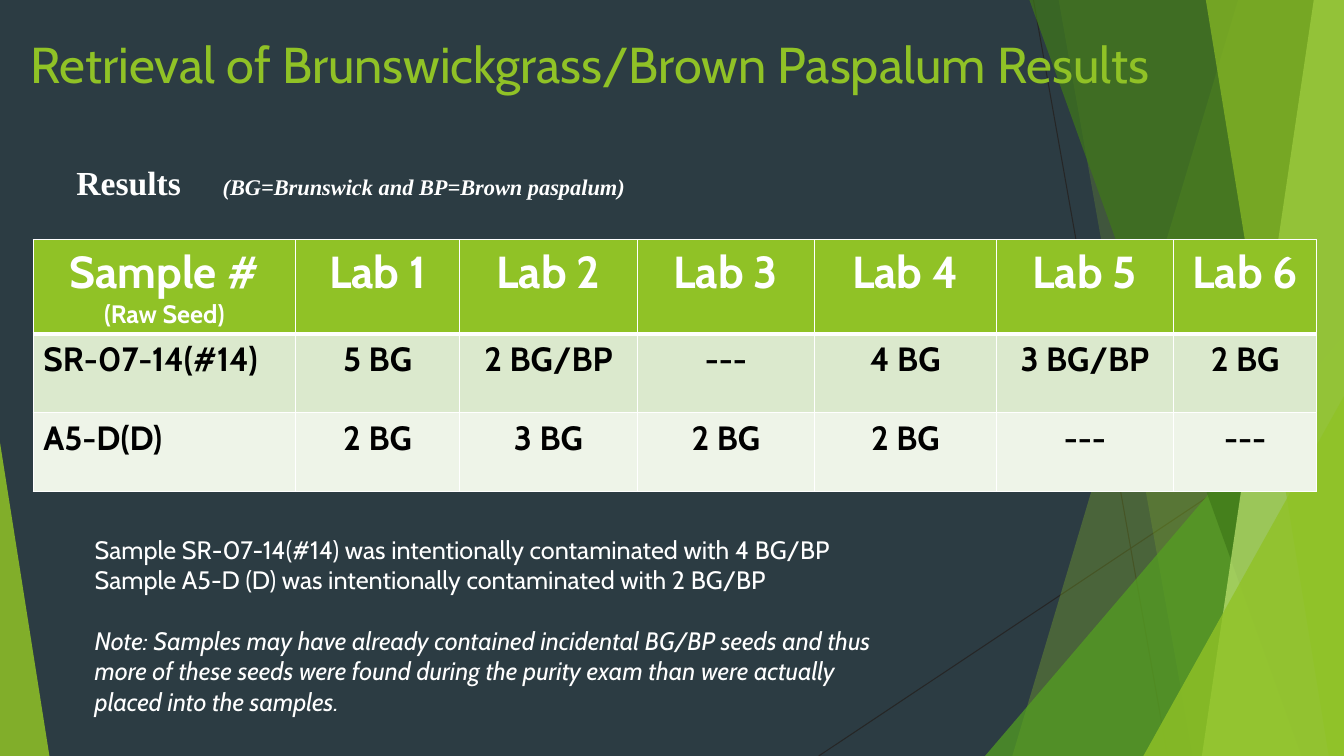
from lxml import etree
from pptx import Presentation
from pptx.dml.color import RGBColor
from pptx.enum.shapes import MSO_CONNECTOR, MSO_SHAPE
from pptx.enum.text import MSO_ANCHOR, PP_ALIGN
from pptx.oxml.ns import qn
from pptx.util import Inches, Pt

STRAIGHT = MSO_CONNECTOR.STRAIGHT
TRIANGLE = MSO_SHAPE.ISOSCELES_TRIANGLE
TOP, MIDDLE = MSO_ANCHOR.TOP, MSO_ANCHOR.MIDDLE
LEFT, CENTER = PP_ALIGN.LEFT, PP_ALIGN.CENTER

SLATE = RGBColor(0x2C, 0x3C, 0x43)
CHARCOAL = RGBColor(0x26, 0x26, 0x26)
LIME = RGBColor(0x90, 0xC2, 0x26)
GREEN = RGBColor(0x54, 0xA0, 0x21)
FOREST = RGBColor(0x3F, 0x78, 0x19)
PALE_LIME = RGBColor(0xC0, 0xE4, 0x74)
BAND_DARK = RGBColor(0xDB, 0xE9, 0xCD)
BAND_LIGHT = RGBColor(0xEE, 0xF4, 0xE8)
WHITE = RGBColor(0xFF, 0xFF, 0xFF)
BLACK = RGBColor(0, 0, 0)

WIDTH, HEIGHT = 13.33, 7.5
SANS, SERIF = "Cabin", "Times New Roman"

RAYS = [((10.25, 0), (11.58, HEIGHT)), ((WIDTH, 4.03), (8.12, HEIGHT))]
SHARDS = [
    ("band", 12.28, 10.04, LIME, 30),
    ("band", 10.5, 11.83, LIME, 20),
    ("triangle", (9.77, 3.33, 3.56, 4.17), 1, GREEN, 72),
    ("band", 10.21, 12.91, FOREST, 70),
    ("band", 13.03, 11.92, PALE_LIME, 70),
    ("band", 11.96, 13.18, LIME, 65),
    ("triangle", (11.34, 3.93, 1.99, 3.57), 1, LIME, 80),
    ("triangle", (0, 4.39, 0.49, 3.11), 0, LIME, 85),
]
COLUMNS = [2.6, 1.63, 1.76, 1.76, 1.8, 1.76, 1.42]
ROW_HEIGHT = 0.78
RESULTS = [
    ["Sample #"] + [f"Lab {n}" for n in range(1, 7)],
    ["SR-07-14(#14)", "5 BG", "2 BG/BP", "---", "4 BG", "3 BG/BP", "2 BG"],
    ["A5-D(D)", "2 BG", "3 BG", "2 BG", "2 BG", "---", "---"],
]
ROW_STYLES = [(LIME, WHITE, 32), (BAND_DARK, BLACK, 24), (BAND_LIGHT, BLACK, 24)]
NOTES = [
    ("Sample SR-07-14(#14) was intentionally contaminated with 4 BG/BP", False, 0),
    ("Sample A5-D (D) was intentionally contaminated with 2 BG/BP", False, 0),
    ("Note: Samples may have already contained incidental BG/BP seeds and thus more of "
     "these seeds were found during the purity exam than were actually placed into the "
     "samples.", True, 22),
]


def add_run(p, text, size=18, color=WHITE, font=SANS, bold=False, italic=False):
    """Append a formatted run to a paragraph."""
    r = p.add_run()
    r.text = text
    f = r.font
    f.size, f.name, f.bold, f.italic = Pt(size), font, bold, italic
    f.color.rgb = color


def add_box(s, box, anchor=TOP):
    """Add a wrapping text box and return its text frame."""
    tf = s.shapes.add_textbox(*map(Inches, box)).text_frame
    tf.word_wrap = True
    tf.vertical_anchor = anchor
    return tf


def paint(sp, color, opacity):
    """Give a shape a translucent fill without outline or shadow."""
    sp.shadow.inherit = False
    sp.line.fill.background()
    sp.fill.solid()
    sp.fill.fore_color.rgb = color
    clr = sp.fill._xPr.find(".//" + qn("a:srgbClr"))
    etree.SubElement(clr, qn("a:alpha")).set("val", str(opacity * 1000))


def add_ray(s, start, end):
    """Add a thin decorative line."""
    line = s.shapes.add_connector(STRAIGHT, *map(Inches, start + end))
    line.line.color.rgb = CHARCOAL
    line.line.width = Pt(0.75)
    etree.SubElement(line._element.spPr, qn("a:effectLst"))


def add_band(s, top_x, bottom_x):
    """Add a full-height band from a slanted left edge to the slide's right edge."""
    right, bottom = Inches(WIDTH), Inches(HEIGHT)
    builder = s.shapes.build_freeform(Inches(top_x), 0)
    builder.add_line_segments([(right, 0), (right, bottom), (Inches(bottom_x), bottom)])
    return builder.convert_to_shape()


def add_triangle(s, box, apex):
    """Add a triangle whose apex sits at a fraction of its width."""
    sp = s.shapes.add_shape(TRIANGLE, *map(Inches, box))
    sp.adjustments[0] = apex
    return sp


def add_backdrop(s):
    """Draw the dark background with its rays and green shards."""
    s.background.fill.solid()
    s.background.fill.fore_color.rgb = SLATE
    for start, end in RAYS:
        add_ray(s, start, end)
    makers = {"band": add_band, "triangle": add_triangle}
    for kind, first, second, color, opacity in SHARDS:
        paint(makers[kind](s, first, second), color, opacity)


def add_title(s, box):
    """Place the slide title."""
    p = add_box(s, box).paragraphs[0]
    add_run(p, "Retrieval of Brunswickgrass/Brown Paspalum Results", size=36, color=LIME)


def add_legend(s, box):
    """Place the results heading with its abbreviations at a tab stop."""
    p = add_box(s, box, anchor=MIDDLE).paragraphs[0]
    tabs = etree.SubElement(p._p.get_or_add_pPr(), qn("a:tabLst"))
    etree.SubElement(tabs, qn("a:tab"), pos=str(Inches(1.45)), algn="l")
    add_run(p, "Results\t", size=24, font=SERIF, bold=True)
    add_run(p, "(BG=Brunswick and BP=Brown paspalum)", size=16, font=SERIF,
            bold=True, italic=True)


def set_borders(cell, top, bottom):
    """Draw white borders around a cell, with top and bottom widths in points."""
    tc_pr = cell._tc.get_or_add_tcPr()
    for i, (side, width) in enumerate([("L", 1), ("R", 1), ("T", top), ("B", bottom)]):
        ln = etree.Element(qn(f"a:ln{side}"), w=str(Pt(width)))
        fill = etree.SubElement(ln, qn("a:solidFill"))
        etree.SubElement(fill, qn("a:srgbClr"), val=str(WHITE))
        tc_pr.insert(i, ln)


def add_results(s, box):
    """Place the table of seeds found by each lab."""
    table = s.shapes.add_table(len(RESULTS), len(COLUMNS), *map(Inches, box)).table
    for column, width in zip(table.columns, COLUMNS):
        column.width = Inches(width)
    for i, (values, (fill, color, size)) in enumerate(zip(RESULTS, ROW_STYLES)):
        table.rows[i].height = Inches(ROW_HEIGHT)
        for j, value in enumerate(values):
            cell = table.cell(i, j)
            cell.fill.solid()
            cell.fill.fore_color.rgb = fill
            set_borders(cell, top=3 if i == 1 else 1, bottom=3 if i == 0 else 1)
            p = cell.text_frame.paragraphs[0]
            p.alignment = LEFT if i and j == 0 else CENTER
            add_run(p, value, size=size, color=color, bold=True)
    p = table.cell(0, 0).text_frame.add_paragraph()
    p.alignment = CENTER
    add_run(p, "(Raw Seed)", bold=True)


def add_notes(s, box):
    """Place the remarks on how the samples were contaminated."""
    tf = add_box(s, box)
    for i, (text, italic, gap) in enumerate(NOTES):
        p = tf.add_paragraph() if i else tf.paragraphs[0]
        p.space_before = Pt(gap)
        add_run(p, text, italic=italic)


def main():
    """Build and save the slide."""
    prs = Presentation()
    prs.slide_width, prs.slide_height = Inches(WIDTH), Inches(HEIGHT)
    s = prs.slides.add_slide(prs.slide_layouts[6])
    add_backdrop(s)
    add_title(s, (0.2, 0.28, 12.14, 1.44))
    add_legend(s, (0.66, 1.56, 5.76, 0.5))
    add_results(s, (0.33, 2.38, sum(COLUMNS), ROW_HEIGHT * len(RESULTS)))
    add_notes(s, (0.84, 5.25, 7.92, 1.92))
    prs.save("out.pptx")


if __name__ == "__main__":
    main()
